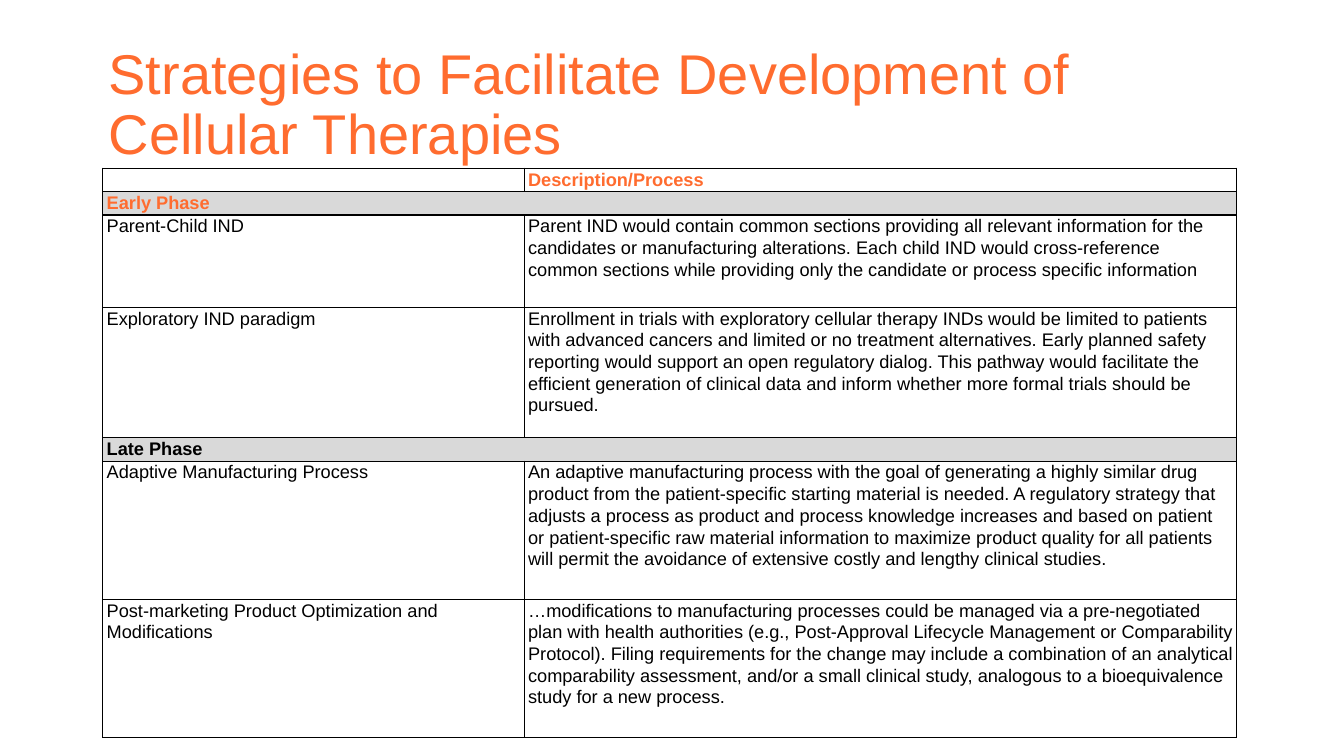
from lxml.etree import SubElement
from pptx import Presentation
from pptx.dml.color import RGBColor
from pptx.enum.text import MSO_ANCHOR
from pptx.oxml import parse_xml
from pptx.oxml.ns import nsdecls, qn
from pptx.util import Cm, Pt

ORANGE, BLACK, WHITE, GREY = "FF6C2F", "000000", "FFFFFF", "D9D9D9"
COLS = [10.62, 17.96]
HEAD = 0.55

# Height, left text, right text; a None on the right marks a full-width band.
ROWS = [
    (HEAD, "", "Description/Process"),
    (HEAD, "Early Phase", None),
    (2.32, "Parent-Child IND",
     "Parent IND would contain common sections providing all relevant "
     "information for the candidates or manufacturing alterations. Each child "
     "IND would cross-reference common sections while providing only the "
     "candidate or process specific information"),
    (3.29, "Exploratory IND paradigm",
     "Enrollment in trials with exploratory cellular therapy INDs would be "
     "limited to patients with advanced cancers and limited or no treatment "
     "alternatives. Early planned safety reporting would support an open "
     "regulatory dialog. This pathway would facilitate the efficient generation "
     "of clinical data and inform whether more formal trials should be pursued."),
    (HEAD, "Late Phase", None),
    (3.48, "Adaptive Manufacturing Process",
     "An adaptive manufacturing process with the goal of generating a highly "
     "similar drug product from the patient-specific starting material is "
     "needed. A regulatory strategy that adjusts a process as product and "
     "process knowledge increases and based on patient or patient-specific raw "
     "material information to maximize product quality for all patients will "
     "permit the avoidance of extensive costly and lengthy clinical studies."),
    (3.48, "Post-marketing Product Optimization and Modifications",
     "…modifications to manufacturing processes could be managed via a "
     "pre-negotiated plan with health authorities (e.g., Post-Approval "
     "Lifecycle Management or Comparability Protocol). Filing requirements for "
     "the change may include a combination of an analytical comparability "
     "assessment, and/or a small clinical study, analogous to a bioequivalence "
     "study for a new process."),
]
ACCENT = {"Description/Process", "Early Phase"}
BOLD = ACCENT | {"Late Phase"}


def color(code):
    return RGBColor.from_string(code)


class Deck:
    font = "Arial"

    def __init__(self):
        self.file = Presentation()
        self.file.slide_width, self.file.slide_height = Cm(33.87), Cm(19.05)
        self.slide = self.file.slides.add_slide(self.file.slide_layouts[6])

    def text(self, frame, words, size, ink, space, bold=False):
        frame.word_wrap = True
        para = frame.paragraphs[0]
        para.text = words
        para.line_spacing = space
        font = para.font
        font.name, font.size, font.bold = self.font, Pt(size), bold
        font.color.rgb = color(ink)
        if not words:  # an empty line takes its height from the end mark
            SubElement(para._p, qn("a:endParaRPr"), sz=str(size * 100))

    def title(self, words, left, top, width, height):
        box = self.slide.shapes.add_textbox(
            Cm(left), Cm(top), Cm(width), Cm(height))
        box.text_frame.vertical_anchor = MSO_ANCHOR.MIDDLE
        self.text(box.text_frame, words, 40, ORANGE, 0.9)

    def border(self, cell):
        props = cell._tc.get_or_add_tcPr()
        for spot, side in enumerate("LRTB"):
            props.insert(spot, parse_xml(
                f'<a:ln{side} {nsdecls("a")} w="{Pt(1)}"><a:solidFill>'
                f'<a:srgbClr val="{BLACK}"/></a:solidFill></a:ln{side}>'))

    def cell(self, cell, words, fill):
        cell.margin_left = cell.margin_right = Cm(0.1)
        cell.margin_top = cell.margin_bottom = 0
        cell.fill.solid()
        cell.fill.fore_color.rgb = color(fill)
        self.border(cell)
        ink = ORANGE if words in ACCENT else BLACK
        self.text(cell.text_frame, words, 13, ink, 1.07, words in BOLD)

    def table(self, left, top):
        high = sum(row[0] for row in ROWS)
        grid = self.slide.shapes.add_table(
            len(ROWS), len(COLS), Cm(left), Cm(top),
            Cm(sum(COLS)), Cm(high)).table
        for col, width in zip(grid.columns, COLS):
            col.width = Cm(width)
        for num, (height, *pair) in enumerate(ROWS):
            grid.rows[num].height = Cm(height)
            band = pair[1] is None
            for col, words in enumerate(pair):
                self.cell(grid.cell(num, col), words or "",
                          GREY if band else WHITE)
            if band:
                grid.cell(num, 0).merge(grid.cell(num, 1))


def main():
    deck = Deck()
    deck.title("Strategies to Facilitate Development of Cellular Therapies",
               2.49, 0.79, 28.78, 3.78)
    deck.table(2.59, 4.24)
    deck.file.save("out.pptx")


if __name__ == "__main__":
    main()
